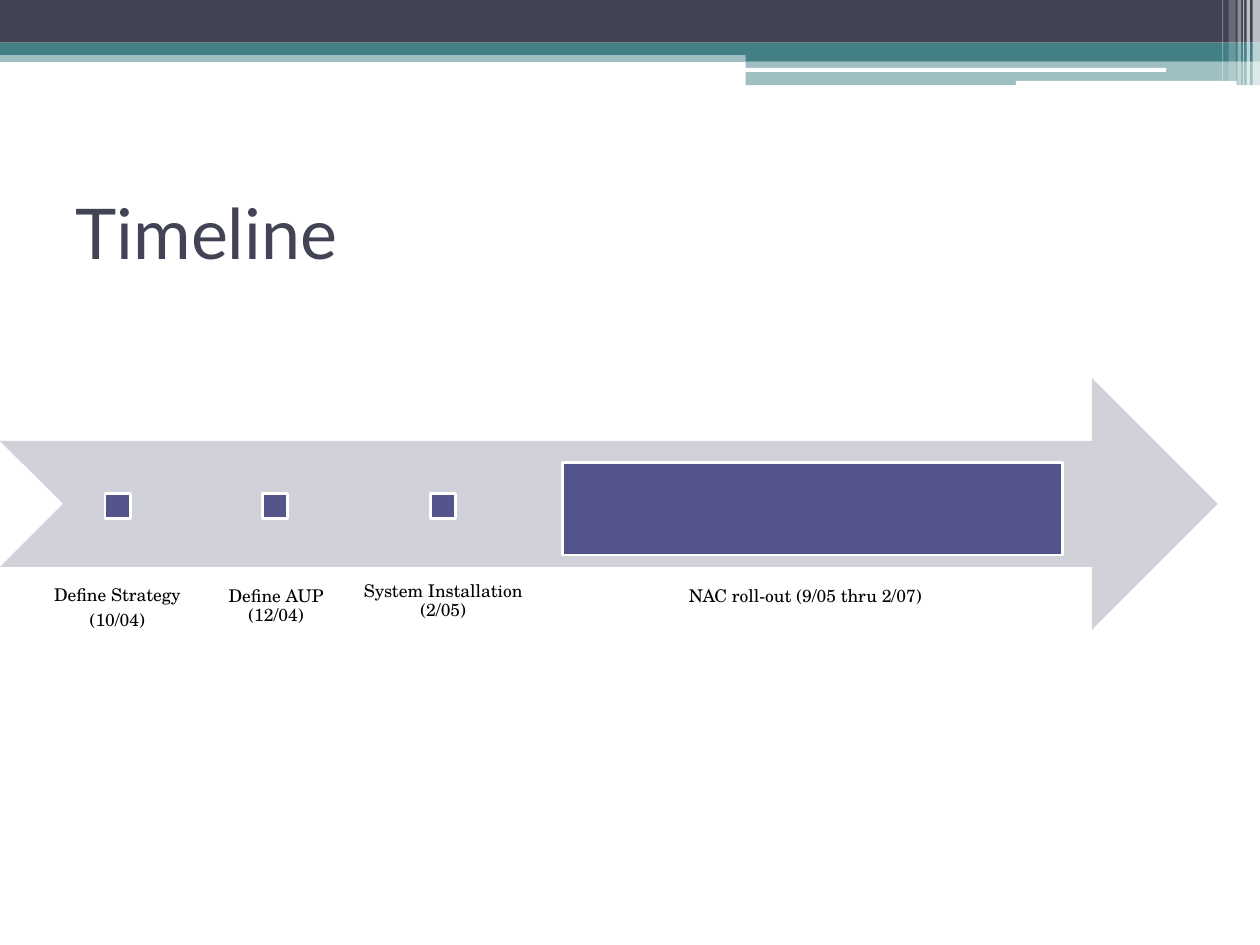
from lxml.etree import SubElement
from pptx import Presentation
from pptx.dml.color import RGBColor
from pptx.enum.shapes import MSO_SHAPE
from pptx.enum.text import MSO_ANCHOR, MSO_AUTO_SIZE, PP_ALIGN
from pptx.oxml.ns import qn
from pptx.util import Cm, Pt

SLATE = RGBColor(0x42, 0x44, 0x56)
TEAL = RGBColor(0x43, 0x80, 0x86)
WHITE = RGBColor(0xFF, 0xFF, 0xFF)
BLACK = RGBColor(0x00, 0x00, 0x00)
PALE_GREY = RGBColor(0xD1, 0xD1, 0xDA)
INDIGO = RGBColor(0x53, 0x54, 0x8A)

TITLE_FONT = "Lato"
LABEL_FONT = "TeX Gyre Schola"

HEADER_BANDS = [
    (0, 1.02, 25.4, 0.23, TEAL, 50),
    (0, 0, 25.4, 0.86, SLATE, 100),
    (0, 0.86, 25.4, 0.25, TEAL, 100),
    (15.03, 0.99, 10.37, 0.24, TEAL, 100),
    (15.03, 1.23, 10.37, 0.49, TEAL, 50),
]
HEADER_RULES = [(15.01, 1.37, 8.5, 0.08), (20.48, 1.63, 4.45, 0.1)]
HEADER_STRIPES = [
    (25.25, 0.15, 1.73, 65),
    (25.13, 0.07, 1.73, 65),
    (25.06, 0.02, 1.73, 60),
    (24.95, 0.07, 1.73, 40),
    (24.77, 0.14, 1.63, 20),
    (24.64, 0.02, 1.63, 30),
]

MILESTONE_SIZE = 0.51
MILESTONE_TOP = 9.95
MILESTONES = [
    (2.12, ["Define Strategy", "(10/04)"], (0.41, 11.43, 3.91, 1.47), MSO_ANCHOR.BOTTOM),
    (5.29, ["Define AUP (12/04)"], (3.81, 11.64, 3.51, 1.4), MSO_ANCHOR.TOP),
    (8.68, ["System Installation (2/05)"], (6.98, 11.1, 3.91, 1.6), MSO_ANCHOR.BOTTOM),
]


def add_block(slide, preset, left, top, width, height, color, opacity=100):
    block = slide.shapes.add_shape(preset, Cm(left), Cm(top), Cm(width), Cm(height))
    block.shadow.inherit = False
    block.fill.solid()
    block.fill.fore_color.rgb = color
    block.line.fill.background()
    if opacity < 100:
        fill_color = next(block._element.spPr.iter(qn("a:srgbClr")))
        SubElement(fill_color, qn("a:alpha"), val=str(opacity * 1000))
    return block


def add_marker(slide, left, top, width, height):
    marker = add_block(slide, MSO_SHAPE.RECTANGLE, left, top, width, height, INDIGO)
    marker.line.color.rgb = WHITE
    marker.line.width = Pt(1.5)


def add_label(slide, lines, box, anchor):
    frame = slide.shapes.add_textbox(*map(Cm, box)).text_frame
    frame.word_wrap = True
    frame.vertical_anchor = anchor
    frame.margin_left = frame.margin_right = Cm(0.2)
    frame.margin_top = frame.margin_bottom = Cm(0.2)
    for index, line in enumerate(lines):
        paragraph = frame.add_paragraph() if index else frame.paragraphs[0]
        paragraph.alignment = PP_ALIGN.CENTER
        paragraph.line_spacing = 0.9
        paragraph.space_after = Pt(3.5)
        add_run(paragraph, line, LABEL_FONT, 10, BLACK)


def add_run(paragraph, text, font, size, color):
    run = paragraph.add_run()
    run.text = text
    run.font.name = font
    run.font.size = Pt(size)
    run.font.color.rgb = color


def add_header(slide):
    for left, top, width, height, color, opacity in HEADER_BANDS:
        add_block(slide, MSO_SHAPE.RECTANGLE, left, top, width, height, color, opacity)
    for rule in HEADER_RULES:
        add_block(slide, MSO_SHAPE.ROUNDED_RECTANGLE, *rule, WHITE)
    for left, width, height, opacity in HEADER_STRIPES:
        add_block(slide, MSO_SHAPE.RECTANGLE, left, 0, width, height, WHITE, opacity)


def set_title(slide, text):
    title = slide.shapes.title
    title.left, title.top = Cm(1.27), Cm(3.18)
    title.width, title.height = Cm(22.86), Cm(2.97)
    frame = title.text_frame
    frame.auto_size = MSO_AUTO_SIZE.NONE
    frame.vertical_anchor = MSO_ANCHOR.MIDDLE
    paragraph = frame.paragraphs[0]
    paragraph.alignment = PP_ALIGN.LEFT
    add_run(paragraph, text, TITLE_FONT, 40, SLATE)


def add_timeline(slide):
    add_block(slide, MSO_SHAPE.NOTCHED_RIGHT_ARROW, 0, 7.62, 24.55, 5.08, PALE_GREY)
    for left, lines, box, anchor in MILESTONES:
        add_label(slide, lines, box, anchor)
        add_marker(slide, left, MILESTONE_TOP, MILESTONE_SIZE, MILESTONE_SIZE)
    add_label(slide, ["NAC roll-out (9/05 thru 2/07)"], (12.27, 11.64, 7.92, 1.35), MSO_ANCHOR.TOP)
    add_marker(slide, 11.34, 9.32, 10.08, 1.87)


def main():
    deck = Presentation()
    deck.slide_width, deck.slide_height = Cm(25.4), Cm(19.05)
    slide = deck.slides.add_slide(deck.slide_layouts[5])
    add_header(slide)
    set_title(slide, "Timeline")
    add_timeline(slide)
    deck.save("out.pptx")


if __name__ == "__main__":
    main()
